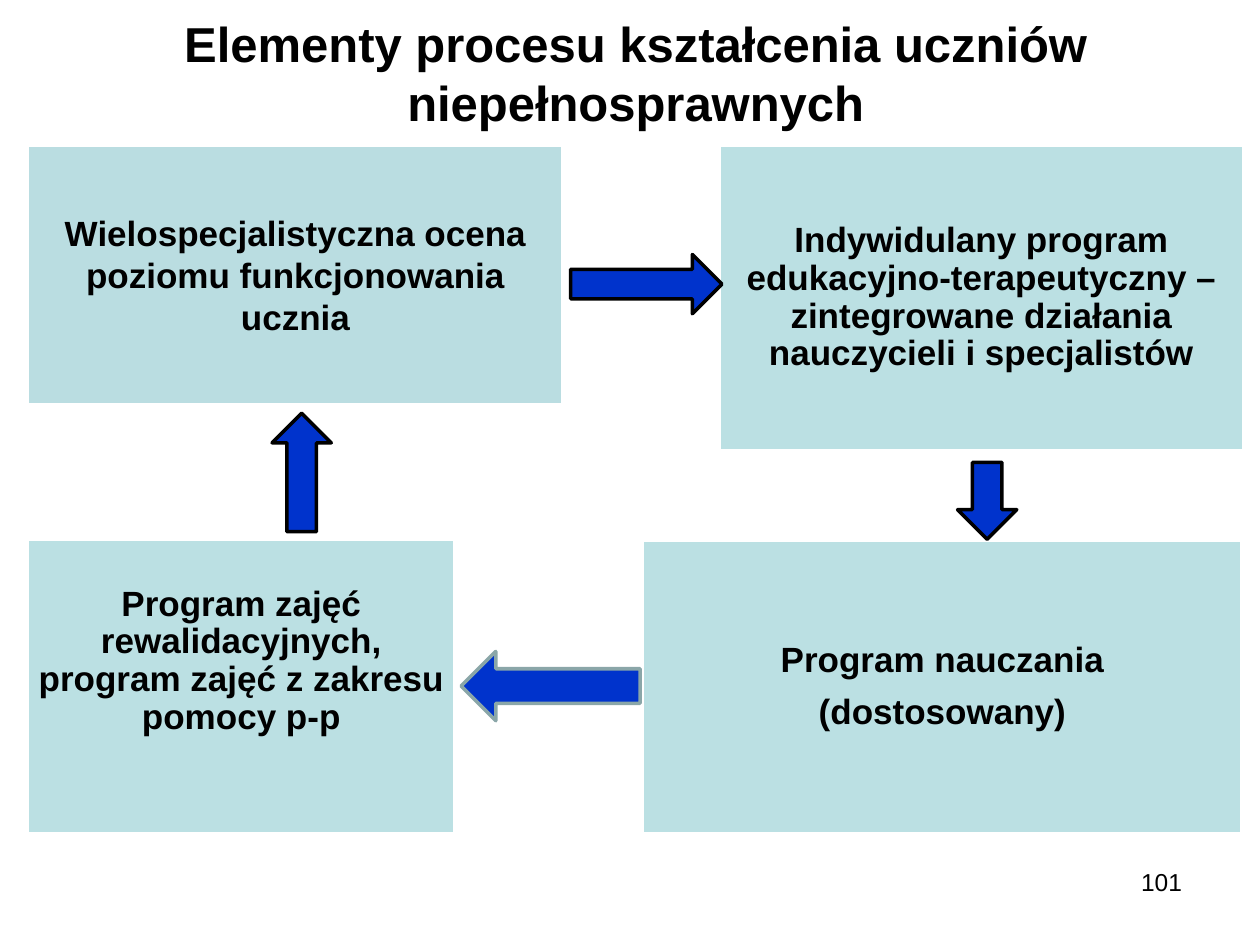
from pptx import Presentation
from pptx.dml.color import RGBColor
from pptx.enum.shapes import MSO_SHAPE as Shape
from pptx.enum.text import MSO_ANCHOR as Anchor, PP_ALIGN as Align
from pptx.util import Inches, Pt

BLACK, WHITE, BLUE, GREY = "000000", "FFFFFF", "0033CC", "8AA6A8"
PALE, TEAL = "BADDE1", "BBE0E3"

STAGES = [
    ((0.22, 1.15, 4.25, 2.06), PALE, 1.0, 0.08,
     ["Wielospecjalistyczna ocena poziomu funkcjonowania ucznia"]),
    ((5.71, 1.15, 4.16, 2.43), TEAL, 0.9, 0.08,
     ["Indywidulany program edukacyjno-terapeutyczny – "
      "zintegrowane działania nauczycieli i specjalistów"]),
    ((5.1, 4.29, 4.76, 2.33), TEAL, 0.9, 0.08,
     ["Program nauczania", "(dostosowany)"]),
    ((0.22, 4.28, 3.39, 2.34), TEAL, 0.9, 0.48,
     ["Program zajęć rewalidacyjnych, program zajęć z zakresu pomocy p-p"]),
]
ARROWS = [
    (Shape.RIGHT_ARROW, (4.53, 2.02, 1.2, 0.47), BLACK),
    (Shape.DOWN_ARROW, (7.6, 3.67, 0.47, 0.61), BLACK),
    (Shape.LEFT_ARROW, (3.66, 5.17, 1.42, 0.55), GREY),
    (Shape.UP_ARROW, (2.16, 3.28, 0.47, 0.94), BLACK),
]


def color(value):
    """Turn a hex string into a colour."""
    return RGBColor.from_string(value)


def format_text(frame, size, bold, align):
    """Give every paragraph of a frame one font and alignment."""
    frame.word_wrap = True
    for para in frame.paragraphs:
        para.alignment = align
        for span in para.runs:
            font = span.font
            font.name, font.size, font.bold = "Arial", Pt(size), bold
            font.color.rgb = color(BLACK)


def add_block(page, kind, box, fill, line):
    """Add a filled and outlined shape without a shadow."""
    block = page.shapes.add_shape(kind, *map(Inches, box))
    block.shadow.inherit = False
    block.fill.solid()
    block.fill.fore_color.rgb = color(fill)
    block.line.color.rgb = color(line)
    block.line.width = Pt(2)
    return block


def add_title(page, box, text):
    """Place and format the title placeholder."""
    title = page.shapes.title
    title.left, title.top, title.width, title.height = map(Inches, box)
    frame = title.text_frame
    frame.text = text
    frame.vertical_anchor = Anchor.MIDDLE
    format_text(frame, 28, True, Align.CENTER)


def add_stage(page, box, fill, spacing, bottom, lines):
    """Add one stage of the cycle with its centred text."""
    frame = add_block(page, Shape.RECTANGLE, box, fill, WHITE).text_frame
    frame.text = "\n".join(lines)
    frame.vertical_anchor = Anchor.MIDDLE
    frame.margin_left = frame.margin_right = frame.margin_top = Inches(0.08)
    frame.margin_bottom = Inches(bottom)
    format_text(frame, 20, True, Align.CENTER)
    for para in frame.paragraphs:
        para.line_spacing = spacing
    for para in frame.paragraphs[:-1]:
        para.space_after = Pt(8)


def add_page_number(page, box, number):
    """Add the page number at the lower right."""
    frame = page.shapes.add_textbox(*map(Inches, box)).text_frame
    frame.text = number
    format_text(frame, 14, False, Align.RIGHT)


def main():
    """Build the slide and save the deck."""
    deck = Presentation()
    deck.slide_width, deck.slide_height = Inches(10), Inches(7.5)
    page = deck.slides.add_slide(deck.slide_layouts[5])
    add_title(page, (0.16, 0.03, 9.77, 1.09),
              "Elementy procesu kształcenia uczniów niepełnosprawnych")
    for stage in STAGES:
        add_stage(page, *stage)
    for kind, box, line in ARROWS:
        add_block(page, kind, box, BLUE, line)
    add_page_number(page, (7.15, 6.83, 2.33, 0.52), "101")
    deck.save("out.pptx")


if __name__ == "__main__":
    main()
